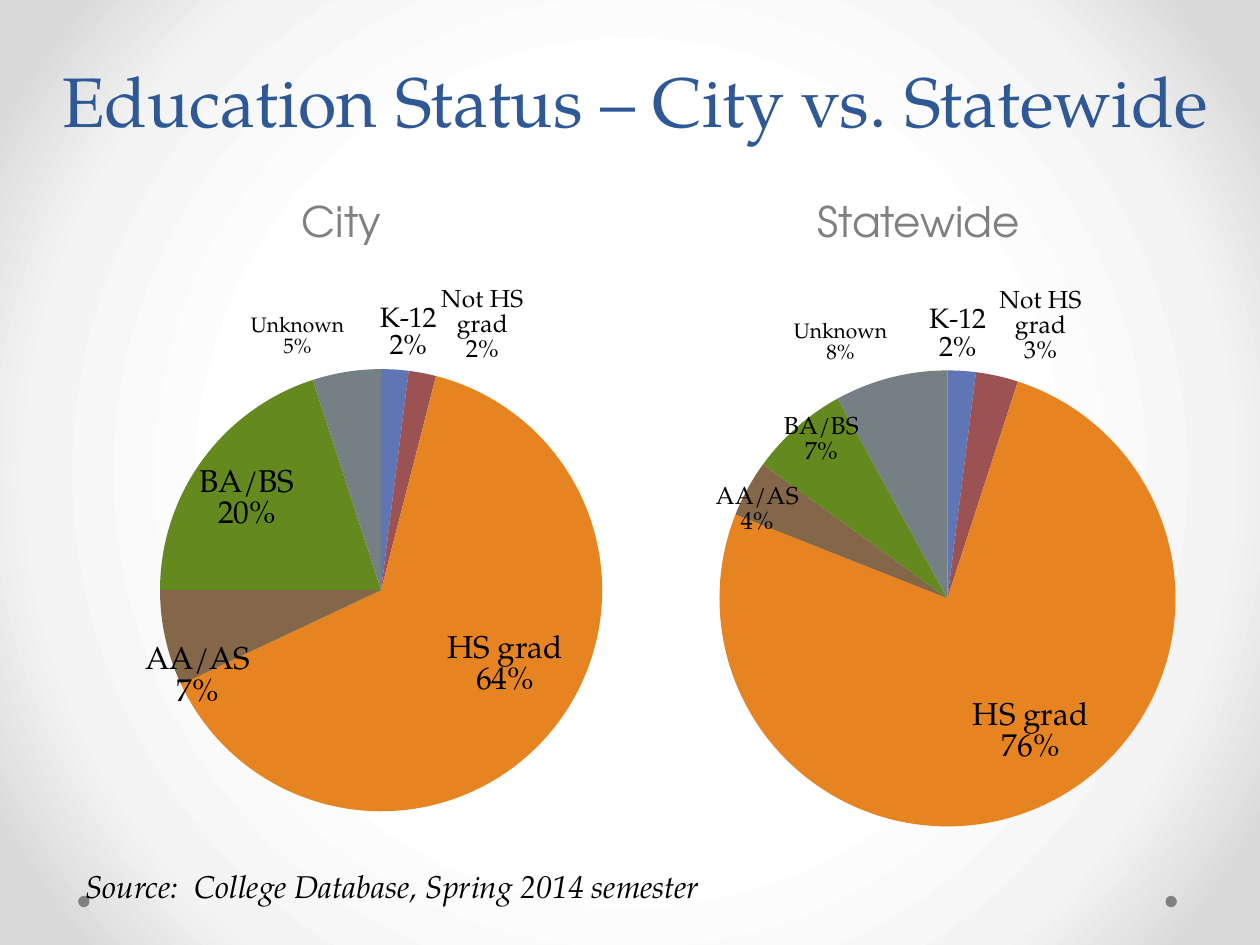
from math import cos, pi, sin

from pptx import Presentation
from pptx.chart.data import CategoryChartData
from pptx.dml.color import RGBColor
from pptx.enum.chart import XL_CHART_TYPE as ChartType, XL_LABEL_POSITION as LabelPos
from pptx.enum.shapes import MSO_SHAPE as Shape
from pptx.enum.text import MSO_ANCHOR as Anchor, MSO_AUTO_SIZE as AutoSize, PP_ALIGN as Align
from pptx.oxml import parse_xml
from pptx.oxml.ns import nsdecls
from pptx.util import Inches, Pt

SERIF, SANS = "TeX Gyre Pagella", "TeX Gyre Adventor"
COLORS = {
    "title": "2F5897", "heading": "808080", "text": "000000",
    "K-12": "6076B4", "Not HS grad": "9C5252", "HS grad": "E68422",
    "AA/AS": "846648", "BA/BS": "63891F", "Unknown": "758085",
}
LEVELS = ["K-12", "Not HS grad", "HS grad", "AA/AS", "BA/BS", "Unknown"]
BACKDROP = [(50, "FFFFFF"), (76, "F4F4F4"), (92, "DADADA")]

# Per chart: frame and pie as (left, top, width, height), then for each level
# the value, label size, label centre and the label's typed name, if any
CITY = {
    "frame": (0.5, 2.08, 4.42, 4.62), "pie": (1.27, 2.93, 3.51, 3.51),
    "slices": [(2, 16, (3.24, 2.66), "K-12"), (2, 14, (3.83, 2.59), "Not HS\ngrad"),
               (64, 18, (4.01, 5.3), None), (7, 18, (1.57, 5.39), None),
               (20, 18, (1.96, 3.98), None), (5, 12, (2.36, 2.68), "Unknown")],
}
STATEWIDE = {
    "frame": (4.92, 2.17, 4.61, 4.53), "pie": (5.71, 2.94, 3.62, 3.62),
    "slices": [(2, 16, (7.6, 2.67), "K-12"), (3, 14, (8.26, 2.6), "Not HS\ngrad"),
               (76, 18, (8.18, 5.83), None), (4, 14, (6.01, 4.06), None),
               (7, 14, (6.52, 3.5), "BA/BS"), (8, 12, (6.67, 2.73), "Unknown")],
}


def rgb(name):
    return RGBColor.from_string(COLORS[name])


def set_font(font, size, color, face=SERIF):
    font.size, font.name, font.color.rgb = Pt(size), face, rgb(color)


def set_backdrop(slide):
    slide.background.fill.gradient()
    stops = "".join(f'<a:gs pos="{pos * 1000}"><a:srgbClr val="{color}"/></a:gs>'
                    for pos, color in BACKDROP)
    radial = parse_xml(
        f'<a:gradFill {nsdecls("a")} rotWithShape="1"><a:gsLst>{stops}</a:gsLst>'
        '<a:path path="circle"><a:fillToRect l="50000" t="50000" r="50000" b="50000"/>'
        '</a:path></a:gradFill>')
    linear = slide.background._cSld.xpath("./p:bg/p:bgPr/a:gradFill")[0]
    linear.getparent().replace(linear, radial)


def add_dot(slide, left):
    dot = slide.shapes.add_shape(Shape.OVAL, Inches(left), Inches(7.11), Inches(0.09), Inches(0.09))
    dot.shadow.inherit = False
    dot.fill.solid()
    dot.fill.fore_color.rgb = rgb("heading")
    dot.line.fill.background()


def write_text(box, text, size, color, face=SERIF, align=Align.CENTER):
    frame = box.text_frame
    frame.word_wrap, frame.auto_size = True, AutoSize.NONE
    frame.vertical_anchor = Anchor.BOTTOM
    line = frame.paragraphs[0]
    line.text, line.alignment = text, align
    set_font(line.font, size, color, face)
    return line


def add_text(slide, frame, *args, **kwargs):
    box = slide.shapes.add_textbox(*map(Inches, frame))
    return write_text(box, *args, **kwargs)


def manual_layout(x, y, extra=""):
    return parse_xml(f'<c:layout {nsdecls("c")}><c:manualLayout>{extra}'
                     f'<c:x val="{x:.4f}"/><c:y val="{y:.4f}"/></c:manualLayout></c:layout>')


def place_pie(chart, frame, pie):
    left, top, width, height = frame
    layout = manual_layout(
        (pie[0] - left) / width, (pie[1] - top) / height,
        '<c:layoutTarget val="inner"/><c:xMode val="edge"/><c:yMode val="edge"/>')
    for tag, share in (("w", pie[2] / width), ("h", pie[3] / height)):
        layout[0].append(parse_xml(f'<c:{tag} {nsdecls("c")} val="{share:.4f}"/>'))
    plot_area = chart._chartSpace.xpath(".//c:plotArea")[0]
    for old in plot_area.xpath("./c:layout"):
        plot_area.remove(old)
    plot_area.insert(0, layout)


def show_level_and_percent(labels):
    """Show category and percent on two lines, for a c:dLbls or c:dLbl element."""
    for tag, shown in (("showVal", 0), ("showCatName", 1), ("showPercent", 1)):
        labels.xpath(f"./c:{tag}")[0].set("val", str(shown))
    separator = parse_xml(f'<c:separator {nsdecls("c")}>\n</c:separator>')
    labels.xpath("./c:showBubbleSize|./c:showPercent")[-1].addnext(separator)
    for leader in labels.xpath("./c:showLeaderLines"):
        leader.set("val", "0")


def label_slice(point, text, size):
    label = point.data_label
    if text:
        label.text_frame.text = text
        for line in label.text_frame.paragraphs:
            set_font(line.font, size, "text")
    else:
        set_font(label.font, size, "text")
    label.position = LabelPos.CENTER


def add_pie(slide, frame, pie, slices):
    data = CategoryChartData(number_format="General")
    data.categories = LEVELS
    data.add_series("Series 1", [value for value, *_ in slices])
    chart = slide.shapes.add_chart(ChartType.PIE, *map(Inches, frame), data).chart
    chart.has_legend = chart.has_title = False
    set_font(chart.font, 18, "text")
    place_pie(chart, frame, pie)

    series = chart.plots[0].series[0]
    labels = series.data_labels
    labels.number_format, labels.number_format_is_linked = "0%", False
    show_level_and_percent(labels._element)

    radius = pie[2] / 2
    done, total = 0, sum(value for value, *_ in slices)
    for index, (level, (value, size, target, typed)) in enumerate(zip(LEVELS, slices)):
        point = series.points[index]
        point.format.fill.solid()
        point.format.fill.fore_color.rgb = rgb(level)
        label_slice(point, f"{typed}\n{value}%" if typed else None, size)

        # Label offset is measured from the middle of the slice
        angle = 2 * pi * (done + value / 2) / total
        middle_x = pie[0] + radius + radius / 2 * sin(angle)
        middle_y = pie[1] + radius - radius / 2 * cos(angle)
        label = labels._element.xpath(f'./c:dLbl[c:idx/@val="{index}"]')[0]
        for old in label.xpath("./c:layout"):
            label.remove(old)
        label.insert(1, manual_layout((target[0] - middle_x) / frame[2],
                                      (target[1] - middle_y) / frame[3]))
        show_level_and_percent(label)
        done += value


def main():
    prs = Presentation()
    prs.slide_width, prs.slide_height = Inches(10), Inches(7.5)
    slide = prs.slides.add_slide(prs.slide_layouts[5])
    set_backdrop(slide)
    for left in (9.25, 0.62):
        add_dot(slide, left)

    # Title and chart headings
    title = slide.shapes.title
    title.left, title.top, title.width, title.height = map(Inches, (0.25, 0, 9.58, 1.17))
    write_text(title, "Education Status – City vs. Statewide", 40, "title").line_spacing = Pt(58)
    for left, heading in ((0.5, "City"), (5.08, "Statewide")):
        add_text(slide, (left, 1.33, 4.42, 0.67), heading, 24, "heading", SANS)

    # Pies
    for college in (CITY, STATEWIDE):
        add_pie(slide, **college)

    # Source line
    source = add_text(slide, (0.58, 6.83, 5.92, 0.4), "Source:  College Database, Spring 2014 semester",
                      18, "text", align=Align.LEFT)
    source.font.italic = True

    prs.save("out.pptx")


if __name__ == "__main__":
    main()
